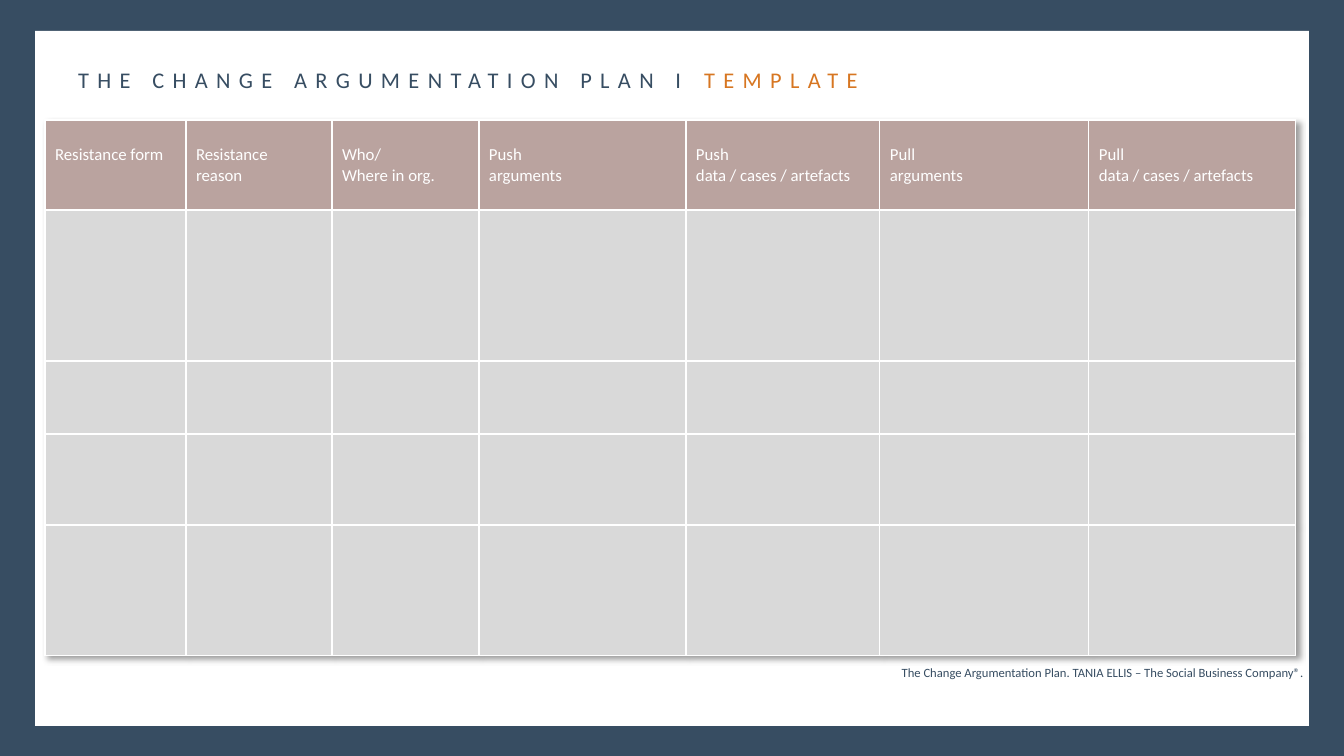
"""Builds the change argumentation plan template slide."""
from dataclasses import dataclass

from lxml import etree
from pptx import Presentation
from pptx import util as u
from pptx.dml.color import RGBColor
from pptx.enum import shapes, text
from pptx.oxml import ns

TITLE = [("THE CHANGE ARGUMENTATION PLAN I ", "navy"), ("TEMPLATE", "orange")]
HEADERS = [
    "Resistance form",
    "Resistance\nreason",
    "Who/\nWhere in org.",
    "Push\narguments",
    "Push\ndata / cases / artefacts",
    "Pull\narguments",
    "Pull\ndata / cases / artefacts",
]
CREDIT = "The Change Argumentation Plan. TANIA ELLIS – The Social Business Company®."

SLIDE_SIZE = (1344, 756)
PANEL_BOX = (35, 31, 1274, 695)
TITLE_BOX = (68, 61, 1108, 37)
CREDIT_BOX = (545, 660, 768, 25)
TABLE_ORIGIN = (45, 120)
COLUMN_WIDTHS = [141, 146, 147, 207, 194, 209, 207]
ROW_HEIGHTS = [90, 151, 73, 91, 131]
HEADER_TOP_MARGIN = 25


@dataclass(frozen=True)
class Theme:
    """Colours, font and type sizes of the slide."""
    navy: str = "374D62"
    orange: str = "D77621"
    white: str = "FFFFFF"
    header: str = "BAA39F"
    body: str = "D9D9D9"
    font: str = "Calibri"
    title_size: int = 16
    header_size: int = 12
    credit_size: int = 9
    title_spacing: int = 600


THEME = Theme()


def px(length):
    """Turns px into EMU."""
    return u.Inches(length / 100.8)


def place(box):
    """Turns a px box into EMU."""
    return [px(length) for length in box]


def paint(fill, colour):
    """Sets a solid fill."""
    fill.solid()
    fill.fore_color.rgb = RGBColor.from_string(colour)


def style(run, size, colour):
    """Formats a run."""
    run.font.name = THEME.font
    run.font.size = u.Pt(size)
    run.font.bold = False
    run.font.color.rgb = RGBColor.from_string(colour)


def add_child(parent, tag, **attributes):
    """Appends a drawing element."""
    return etree.SubElement(parent, ns.qn(tag), attributes)


def add_title(slide):
    """Fills the title placeholder with two coloured runs."""
    title = slide.shapes.title
    title.left, title.top, title.width, title.height = place(TITLE_BOX)
    frame = title.text_frame
    frame.auto_size = text.MSO_AUTO_SIZE.NONE
    frame.vertical_anchor = text.MSO_ANCHOR.TOP
    paragraph = frame.paragraphs[0]
    paragraph.alignment = text.PP_ALIGN.LEFT
    for words, colour in TITLE:
        run = paragraph.add_run()
        run.text = words
        style(run, THEME.title_size, getattr(THEME, colour))
        run._r.get_or_add_rPr().set("spc", str(THEME.title_spacing))


def add_borders(cell):
    """Draws a white line on each side of a cell."""
    properties = cell._tc.get_or_add_tcPr()
    for side in "LRTB":
        line = add_child(properties, f"a:ln{side}", w=str(u.Pt(1)))
        fill = add_child(line, "a:solidFill")
        add_child(fill, "a:srgbClr", val=THEME.white)


def add_table_shadow(table):
    """Casts a soft shadow to the lower right."""
    properties = table._tbl.tblPr
    effects = add_child(properties, "a:effectLst")
    properties.insert(0, effects)
    shadow = add_child(effects, "a:outerShdw", blurRad="50800", dist="38100",
                       dir="2700000", algn="tl", rotWithShape="0")
    colour = add_child(shadow, "a:srgbClr", val="000000")
    add_child(colour, "a:alpha", val="40000")


def add_plan_table(slide):
    """Adds the header row and the empty rows to fill in."""
    box = (*TABLE_ORIGIN, sum(COLUMN_WIDTHS), sum(ROW_HEIGHTS))
    table = slide.shapes.add_table(
        len(ROW_HEIGHTS), len(COLUMN_WIDTHS), *place(box)).table
    table.first_row = table.horz_banding = False
    add_table_shadow(table)
    for column, width in zip(table.columns, COLUMN_WIDTHS):
        column.width = px(width)
    for row, height in zip(table.rows, ROW_HEIGHTS):
        row.height = px(height)
    for cell in table.iter_cells():
        add_borders(cell)
        paint(cell.fill, THEME.body)
    for cell, label in zip(table.rows[0].cells, HEADERS):
        paint(cell.fill, THEME.header)
        cell.margin_top = px(HEADER_TOP_MARGIN)
        cell.text_frame.text = label
        for paragraph in cell.text_frame.paragraphs:
            style(paragraph.runs[0], THEME.header_size, THEME.white)


def add_credit(slide):
    """Adds the right-aligned line below the table."""
    frame = slide.shapes.add_textbox(*place(CREDIT_BOX)).text_frame
    frame.word_wrap = True
    frame.text = CREDIT
    paragraph = frame.paragraphs[0]
    paragraph.alignment = text.PP_ALIGN.RIGHT
    style(paragraph.runs[0], THEME.credit_size, THEME.navy)


def main():
    """Builds and saves the presentation."""
    presentation = Presentation()
    presentation.slide_width, presentation.slide_height = place(SLIDE_SIZE)
    slide = presentation.slides.add_slide(
        presentation.slide_layouts.get_by_name("Title Only"))
    paint(slide.background.fill, THEME.navy)
    panel = slide.shapes.add_shape(
        shapes.MSO_SHAPE.RECTANGLE, *place(PANEL_BOX))
    panel.shadow.inherit = False
    paint(panel.fill, THEME.white)
    panel.line.fill.background()
    slide.shapes._spTree.insert(2, panel._element)
    add_plan_table(slide)
    add_credit(slide)
    add_title(slide)
    presentation.save("out.pptx")


if __name__ == "__main__":
    main()
